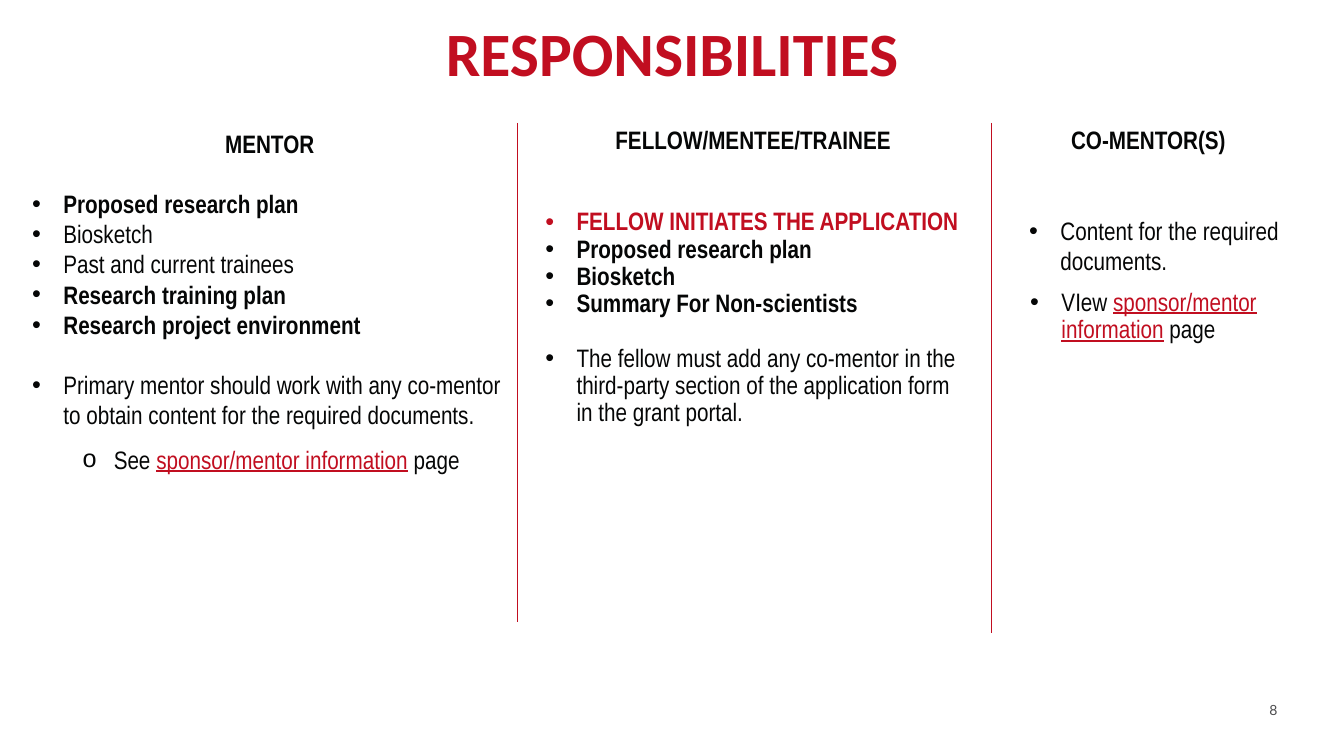
"""Build the slide that sets out responsibilities in three columns."""
from dataclasses import dataclass

import lxml.etree
import pptx
import pptx.dml.color
import pptx.enum.shapes
import pptx.enum.text
import pptx.oxml.ns
import pptx.util

Inches = pptx.util.Inches
Pt = pptx.util.Pt
Align = pptx.enum.text.PP_ALIGN
Anchor = pptx.enum.text.MSO_ANCHOR
Color = pptx.dml.color.RGBColor
qn = pptx.oxml.ns.qn

RED = Color(0xC1, 0x0E, 0x20)
BLACK = Color(0x05, 0x06, 0x06)
GRAY = Color(0x4D, 0x4D, 0x4F)
WHITE = Color(0xFF, 0xFF, 0xFF)
HANG = 0.31


@dataclass
class Run:
    text: str
    bold: bool = False
    color: Color = BLACK
    under: bool = False


@dataclass
class Para:
    runs: list[Run]
    bullet: str = ""
    left: float = HANG
    level: int = 0
    before: float = 0
    line: float = 1.0
    align: Align = Align.LEFT


@dataclass
class Column:
    box: tuple[float, float, float, float]
    paras: list[Para]
    filled: bool = False


@dataclass
class Rule:
    left: float
    bottom: float


def head(label: str, line: float = 0.9) -> Para:
    """Return a centred column heading."""
    return Para([Run(label, True)], line=line, align=Align.CENTER)


def item(label: str, bold: bool = False, color: Color = BLACK, **form) -> Para:
    """Return a bulleted line."""
    return Para([Run(label, bold, color)], "•", **form)


def page(verb: str, bullet: str, **form) -> Para:
    """Return a line that points to the information page."""
    link = Run("sponsor/mentor information", color=RED, under=True)
    return Para([Run(verb + " "), link, Run(" page")], bullet, level=1, before=10, **form)


TOP = 1.22
COLUMNS = [
    Column((5.31, TOP, 4.32, 5.07), [
        head("FELLOW/MENTEE/TRAINEE"),
        item("FELLOW INITIATES THE APPLICATION", True, RED, before=38.6, line=0.9),
        item("Proposed research plan", True, line=0.9),
        item("Biosketch", True, line=0.9),
        item("Summary For Non-scientists", True, line=0.9),
        item("The fellow must add any co-mentor in the third-party section "
             "of the application form in the grant portal.", before=19.4, line=0.9),
    ]),
    Column((0.22, TOP, 4.91, 4.17), [
        head("MENTOR", 1.0),
        item("Proposed research plan", True, before=21.5),
        item("Biosketch"),
        item("Past and current trainees"),
        item("Research training plan", True),
        item("Research project environment", True),
        item("Primary mentor should work with any co-mentor to obtain "
             "content for the required documents.", before=21.5),
        page("See", "o", left=0.81),
    ], True),
    Column((9.86, TOP, 3.06, 5.07), [
        head("CO-MENTOR(S)"),
        item("Content for the required documents.", before=43, left=0.56),
        page("VIew", "•", left=0.57, line=0.9),
    ]),
]
RULES = [Rule(5.13, 6.17), Rule(9.83, 6.28)]


def mark(para, sign: str, left: float) -> None:
    """Give a paragraph a hanging bullet."""
    props = para._p.get_or_add_pPr()
    props.set("marL", str(Inches(left)))
    props.set("indent", str(-Inches(HANG)))
    font = lxml.etree.SubElement(props, qn("a:buFont"))
    font.set("typeface", "Arial")
    lxml.etree.SubElement(props, qn("a:buChar")).set("char", sign)


def write(shape, paras: list[Para], *, size: float = 18, face: str = "Arial Narrow",
          anchor: Anchor = Anchor.TOP, wrap: bool = True) -> None:
    """Fill a shape with formatted paragraphs."""
    frame = shape.text_frame
    frame.word_wrap = wrap
    frame.vertical_anchor = anchor
    for spot, para in enumerate(paras):
        line = frame.add_paragraph() if spot else frame.paragraphs[0]
        line.level = para.level
        if para.bullet:
            mark(line, para.bullet, para.left)
        line.alignment = para.align
        line.line_spacing = para.line
        if para.before:
            line.space_before = Pt(para.before)
        for part in para.runs:
            run = line.add_run()
            run.text = part.text
            run.font.name = face
            run.font.size = Pt(size)
            run.font.bold = part.bold
            run.font.underline = part.under
            run.font.color.rgb = part.color


def place(slide, box: tuple[float, float, float, float], filled: bool = False):
    """Add a text box or a plain white rectangle."""
    spot = [Inches(size) for size in box]
    if not filled:
        return slide.shapes.add_textbox(*spot)
    shape = slide.shapes.add_shape(pptx.enum.shapes.MSO_SHAPE.RECTANGLE, *spot)
    shape.shadow.inherit = False
    shape.fill.solid()
    shape.fill.fore_color.rgb = WHITE
    shape.line.fill.background()
    return shape


def divide(slide, rule: Rule) -> None:
    """Draw an upright line between columns."""
    line = slide.shapes.add_connector(
        pptx.enum.shapes.MSO_CONNECTOR.STRAIGHT,
        Inches(rule.left), Inches(TOP), Inches(rule.left), Inches(rule.bottom))
    line.line.color.rgb = RED
    line.line.width = Pt(0.5)
    lxml.etree.SubElement(line._element.spPr, qn("a:effectLst"))


def main() -> None:
    """Build and save the deck."""
    deck = pptx.Presentation()
    deck.slide_width = Inches(13.33)
    deck.slide_height = Inches(7.5)
    slide = deck.slides.add_slide(deck.slide_layouts[6])
    write(place(slide, (12.49, 6.91, 0.39, 0.27)), [Para([Run("8", color=GRAY)])],
          size=10, face="Lato", wrap=False)
    title = Para([Run("RESPONSIBILITIES", True, RED)], line=0.9, align=Align.CENTER)
    write(place(slide, (0.92, 0.4, 11.5, 0.54)), [title],
          size=44, face="Calibri", anchor=Anchor.BOTTOM)
    for column in COLUMNS:
        write(place(slide, column.box, column.filled), column.paras)
    for rule in RULES:
        divide(slide, rule)
    deck.save("out.pptx")


if __name__ == "__main__":
    main()
